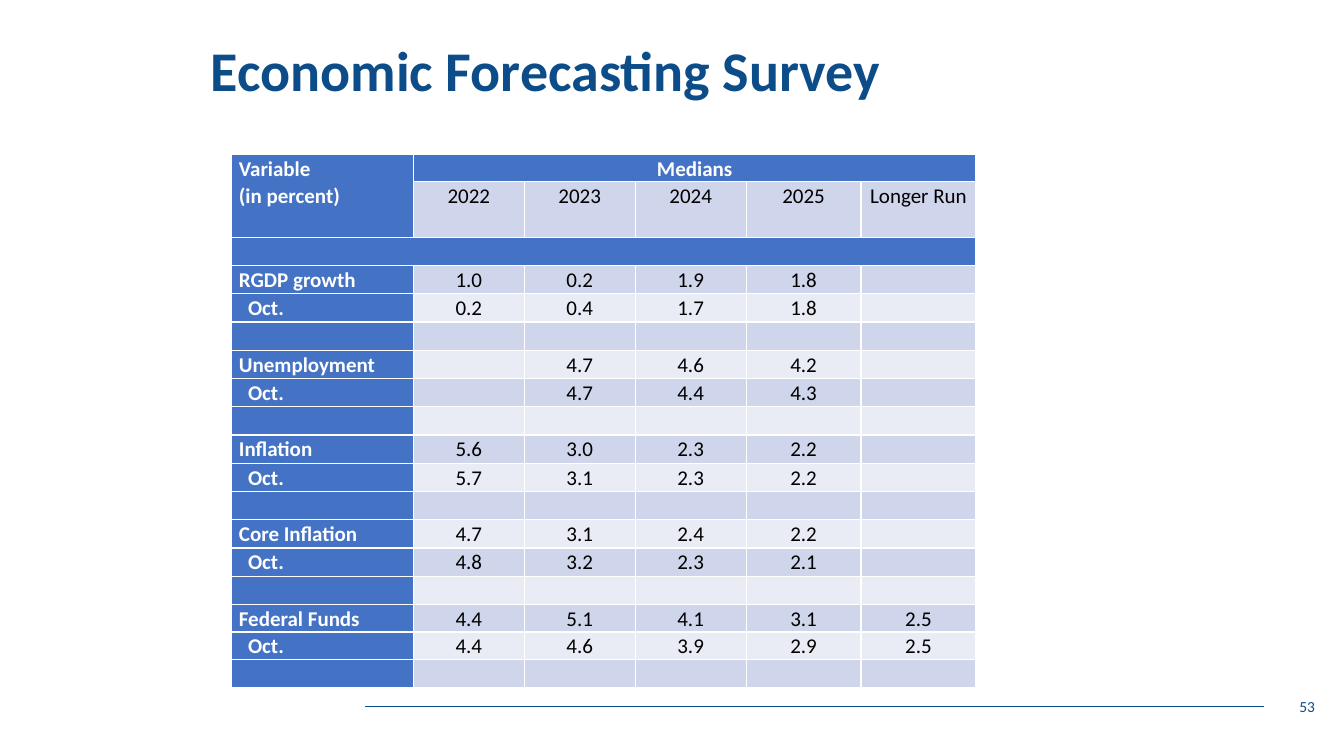
from pptx import Presentation
from pptx.dml.color import RGBColor
from pptx.enum.shapes import MSO_CONNECTOR
from pptx.enum.text import MSO_ANCHOR, PP_ALIGN
from pptx.oxml import parse_xml
from pptx.oxml.ns import nsdecls
from pptx.util import Inches, Pt

FONT = "Calibri"
COLORS = {
    "navy": "0C4C88",
    "white": "FFFFFF",
    "black": "000000",
    "header": "4472C4",
    "dark band": "CFD5EA",
    "light band": "E9EBF5",
}
YEARS = ["2022", "2023", "2024", "2025", "Longer Run"]
FORECASTS = [
    ("RGDP growth", ["1.0", "0.2", "1.9", "1.8", ""], ["0.2", "0.4", "1.7", "1.8", ""]),
    ("Unemployment", ["", "4.7", "4.6", "4.2", ""], ["", "4.7", "4.4", "4.3", ""]),
    ("Inflation", ["5.6", "3.0", "2.3", "2.2", ""], ["5.7", "3.1", "2.3", "2.2", ""]),
    ("Core Inflation", ["4.7", "3.1", "2.4", "2.2", ""], ["4.8", "3.2", "2.3", "2.1", ""]),
    ("Federal Funds", ["4.4", "5.1", "4.1", "3.1", "2.5"], ["4.4", "4.6", "3.9", "2.9", "2.5"]),
]
COLUMN_WIDTHS = [1.8, 1.1, 1.1, 1.1, 1.14, 1.14]
ROW_HEIGHT, YEAR_ROW_HEIGHT = 0.27, 0.55


def color(name):
    return RGBColor.from_string(COLORS[name])


def style_font(font, size, color_name, bold=False):
    font.name, font.size, font.bold = FONT, Pt(size), bold
    font.color.rgb = color(color_name)


def add_title(page, text):
    title = page.shapes.title
    title.left, title.top = Inches(1.99), Inches(0)
    title.width, title.height = Inches(10.43), Inches(1.45)
    title.text_frame.vertical_anchor = MSO_ANCHOR.MIDDLE
    para = title.text_frame.paragraphs[0]
    para.text, para.alignment, para.line_spacing = text, PP_ALIGN.LEFT, 0.9
    style_font(para.font, 40, "navy", True)


def add_footer_line(page):
    line = page.shapes.add_connector(
        MSO_CONNECTOR.STRAIGHT, Inches(3.62), Inches(7.01), Inches(12.54), Inches(7.01))
    line.line.color.rgb = color("navy")
    line.line.width = Pt(0.5)
    line.element.spPr.append(parse_xml(f"<a:effectLst {nsdecls('a')}/>"))


def add_page_number(page, number):
    box = page.shapes.add_textbox(Inches(10.14), Inches(6.81), Inches(3), Inches(0.4))
    box.text_frame.word_wrap = True
    box.text_frame.vertical_anchor = MSO_ANCHOR.MIDDLE
    para = box.text_frame.paragraphs[0]
    para.text, para.alignment = number, PP_ALIGN.RIGHT
    style_font(para.font, 11, "navy")


def fill_cell(cell, text, fill, heading=False, centered=True, indent=0):
    cell.fill.solid()
    cell.fill.fore_color.rgb = color(fill)
    cell.margin_left, cell.margin_right = Inches(0.07 + indent), Inches(0.07)
    cell.margin_top = cell.margin_bottom = Inches(0)
    cell.text = text
    for para in cell.text_frame.paragraphs:
        para.alignment = PP_ALIGN.CENTER if centered else PP_ALIGN.LEFT
        para.line_spacing = 1.07
        span = para.runs[0] if para.runs else para.add_run()
        style_font(span.font, 15, "white" if heading else "black", heading)


def table_rows():
    """List the label and values of each row below the headings."""
    rows = []
    for variable, latest, october in FORECASTS:
        rows += [(variable, latest), ("Oct.", october), ("", [""] * len(YEARS))]
    return rows


def add_forecast_table(page):
    rows = table_rows()
    heights = [ROW_HEIGHT, YEAR_ROW_HEIGHT] + [ROW_HEIGHT] * (len(rows) + 1)
    table = page.shapes.add_table(
        len(heights), len(COLUMN_WIDTHS), Inches(2.3), Inches(1.53),
        Inches(sum(COLUMN_WIDTHS)), Inches(sum(heights))).table
    table.first_col = True
    for column, width in zip(table.columns, COLUMN_WIDTHS):
        column.width = Inches(width)
    for row, height in zip(table.rows, heights):
        row.height = Inches(height)

    last = len(YEARS)
    table.cell(0, 0).merge(table.cell(1, 0))
    table.cell(0, 1).merge(table.cell(0, last))
    table.cell(2, 0).merge(table.cell(2, last))
    fill_cell(table.cell(0, 0), "Variable\n(in percent)", "header", True, False)
    fill_cell(table.cell(0, 1), "Medians", "header", True)
    fill_cell(table.cell(2, 0), "", "header", True)
    for index, year in enumerate(YEARS, 1):
        fill_cell(table.cell(1, index), year, "dark band")
    for index, (label, values) in enumerate(rows, 3):
        indent = 0.09 if label == "Oct." else 0
        fill_cell(table.cell(index, 0), label, "header", True, False, indent)
        band = "dark band" if index % 2 else "light band"
        for column, value in enumerate(values, 1):
            fill_cell(table.cell(index, column), value, band)


def main():
    deck = Presentation()
    deck.slide_width, deck.slide_height = Inches(13.33), Inches(7.5)
    page = deck.slides.add_slide(deck.slide_layouts[5])
    add_title(page, "Economic Forecasting Survey")
    add_footer_line(page)
    add_forecast_table(page)
    add_page_number(page, "53")
    deck.save("out.pptx")


if __name__ == "__main__":
    main()
